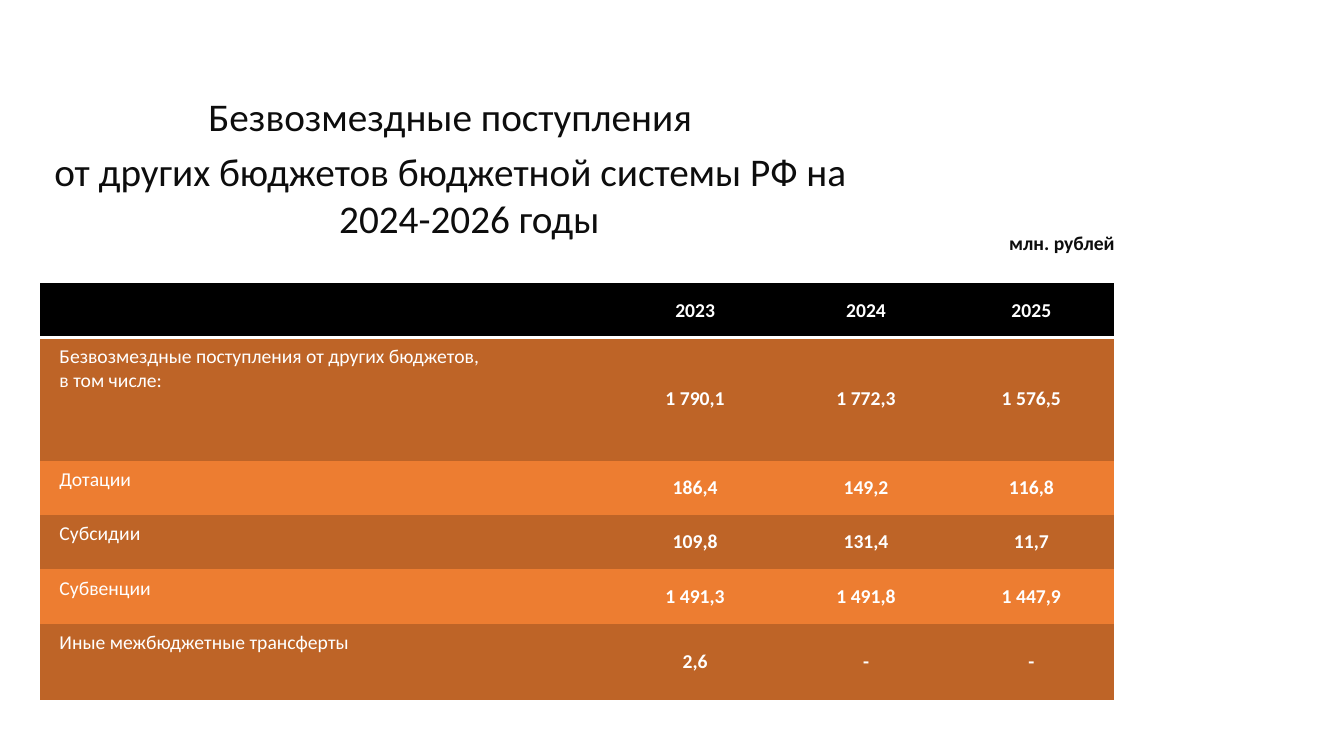
from lxml import etree
from pptx import Presentation
from pptx.dml.color import RGBColor
from pptx.enum.text import MSO_ANCHOR, MSO_AUTO_SIZE, PP_ALIGN
from pptx.oxml.ns import qn
from pptx.util import Inches, Pt

CENTER, LEFT = PP_ALIGN.CENTER, PP_ALIGN.LEFT
TOP, MIDDLE = MSO_ANCHOR.TOP, MSO_ANCHOR.MIDDLE
NO_FIT = MSO_AUTO_SIZE.NONE
NO_GRID_STYLE = "{2D5ABB26-0587-4C30-8999-92F81FD0307C}"

TITLE = ["Безвозмездные поступления",
         "от других бюджетов бюджетной системы РФ на 2024-2026 годы"]
UNIT = "млн. рублей"
ROWS = [
    ["", "2023", "2024", "2025"],
    ["Безвозмездные поступления от других бюджетов,\nв том числе:",
     "1 790,1", "1 772,3", "1 576,5"],
    ["Дотации", "186,4", "149,2", "116,8"],
    ["Субсидии", "109,8", "131,4", "11,7"],
    ["Субвенции", "1 491,3", "1 491,8", "1 447,9"],
    ["Иные межбюджетные трансферты", "2,6", "-", "-"],
]
COL_WIDTHS = [5.62, 1.75, 1.64, 1.64]
ROW_HEIGHTS = [0.54, 1.22, 0.54, 0.54, 0.54, 0.76]
COLORS = {"text": "0D0D0D", "white": "FFFFFF", "header": "000000",
          "dark": "BE6427", "light": "ED7D31"}
TITLE_FONT = {"name": "Calibri", "size": Pt(28), "bold": False}
VALUE_FONT = {"name": "Calibri", "size": Pt(14), "bold": True}
LABEL_FONT = {**VALUE_FONT, "bold": False}


def write(tf, lines, font, color, align, indent=0, hanging=0, gap=0):
    for i, line in enumerate(lines):
        p = tf.paragraphs[0] if i == 0 else tf.add_paragraph()
        p.alignment = align
        p.space_before = Pt(gap if i else 0)
        pPr = p._p.get_or_add_pPr()
        pPr.set("marL", str(Inches(indent)))
        pPr.set("indent", str(-Inches(hanging)))
        r = p.add_run()
        r.text = line
        for name, value in font.items():
            setattr(r.font, name, value)
        r.font.color.rgb = RGBColor.from_string(COLORS[color])


def bottom_border(cell, color, width):
    tcPr = cell._tc.get_or_add_tcPr()
    ln = etree.Element(qn("a:lnB"), w=str(Pt(width)))
    fill = etree.SubElement(ln, qn("a:solidFill"))
    etree.SubElement(fill, qn("a:srgbClr"), val=COLORS[color])
    tcPr.insert(0, ln)


prs = Presentation()
prs.slide_width, prs.slide_height = Inches(13.33), Inches(7.5)
s = prs.slides.add_slide(prs.slide_layouts[5])

title = s.shapes.title
title.left, title.top = Inches(0.26), Inches(0.87)
title.width, title.height = Inches(8.41), Inches(0.45)
tf = title.text_frame
tf.auto_size, tf.vertical_anchor, tf.word_wrap = NO_FIT, TOP, True
write(tf, TITLE, TITLE_FONT, "text", CENTER, indent=0.38, hanging=0.38, gap=5.6)

table = s.shapes.add_table(len(ROWS), len(COL_WIDTHS), Inches(0.4), Inches(2.81),
                           Inches(sum(COL_WIDTHS)), Inches(sum(ROW_HEIGHTS))).table
table._tbl.tblPr.find(qn("a:tableStyleId")).text = NO_GRID_STYLE
for col, width in zip(table.columns, COL_WIDTHS):
    col.width = Inches(width)
for row, height in zip(table.rows, ROW_HEIGHTS):
    row.height = Inches(height)

for i, values in enumerate(ROWS):
    band = "header" if i == 0 else "dark" if i % 2 else "light"
    for j, value in enumerate(values):
        cell = table.cell(i, j)
        for side in ("left", "right", "top", "bottom"):
            setattr(cell, f"margin_{side}", Inches(0.07))
        cell.fill.solid()
        cell.fill.fore_color.rgb = RGBColor.from_string(COLORS[band])
        if i == 0:
            bottom_border(cell, "white", 2)
        if j:
            cell.vertical_anchor = MIDDLE
            write(cell.text_frame, [value], VALUE_FONT, "white", CENTER)
        elif value:
            write(cell.text_frame, value.split("\n"), LABEL_FONT, "white", LEFT,
                  indent=0.12)

unit = s.shapes.add_textbox(Inches(9.91), Inches(2.24), Inches(1.25), Inches(0.39))
unit.text_frame.word_wrap = False
write(unit.text_frame, [UNIT], VALUE_FONT, "text", LEFT)

prs.save("out.pptx")
